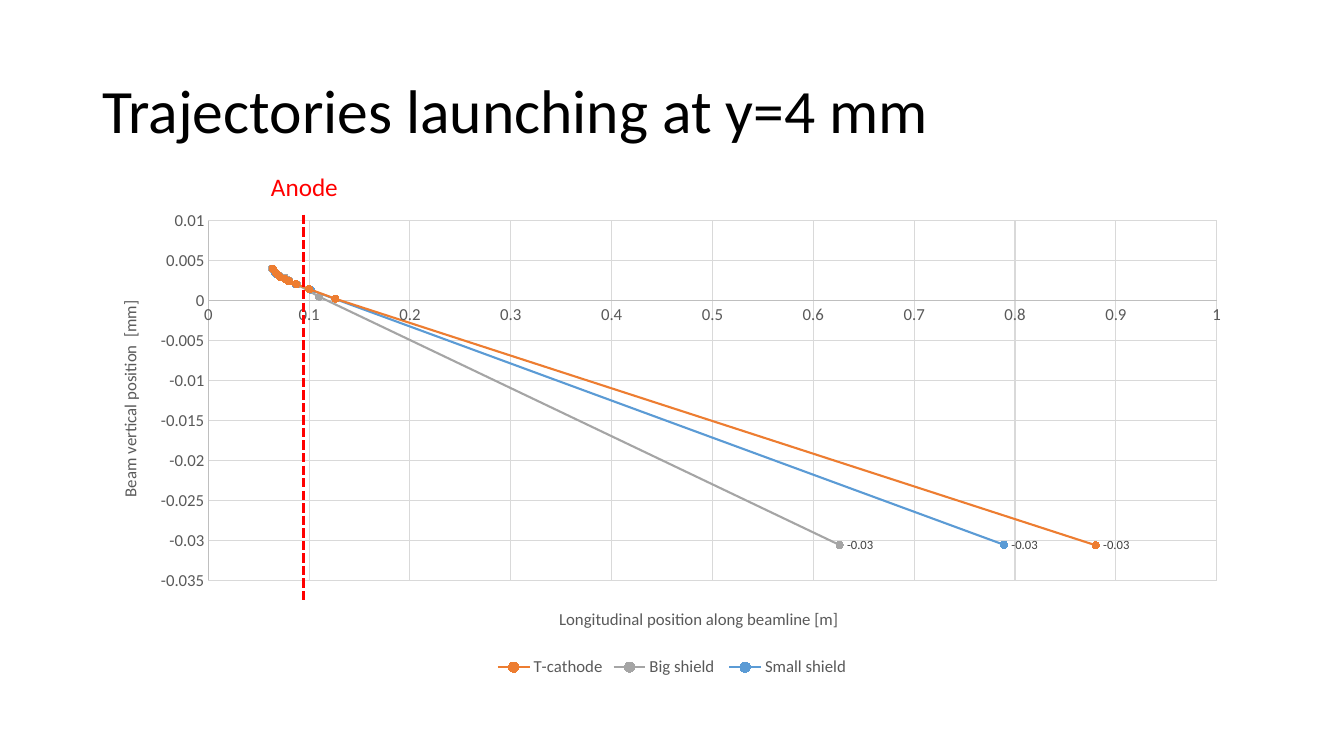
from lxml import etree
from pptx import Presentation
from pptx.chart.data import XyChartData
from pptx.dml.color import RGBColor
from pptx.enum import chart as ch, dml, shapes, text
from pptx.oxml import parse_xml
from pptx.oxml.ns import nsdecls, qn
from pptx.util import Pt

HUES = {"ink": "000000", "grey": "595959", "label": "404040", "axis": "BFBFBF",
        "grid": "D9D9D9", "red": "FF0000"}
FACE = "Calibri"
TITLE = "Trajectories launching at y=4 mm"
PATHS = [
    ("T-cathode", "ED7D31",
     [0.064] * 6 + [0.067, 0.069, 0.071, 0.076, 0.08, 0.087, 0.1, 0.126, 0.88],
     [0.004, 0.004, 0.004, 0.004, 0.003999, 0.003973, 0.003479, 0.003221,
      0.002966, 0.002719, 0.002432, 0.002063, 0.001444, 0.000238, -0.030607]),
    ("Big shield ", "A5A5A5",
     [0.063] * 6 + [0.067, 0.07, 0.076, 0.08, 0.088, 0.11, 0.626],
     [0.004, 0.004, 0.004, 0.004, 0.003999, 0.003982, 0.003464, 0.003171,
      0.002862, 0.002525, 0.002031, 0.000492, -0.030567]),
    ("Small shield", "5B9BD5",
     [0.064, 0.064, 0.066, 0.068, 0.071, 0.076, 0.08, 0.087, 0.102, 0.789],
     [0.004, 0.004, 0.003549, 0.003279, 0.003014, 0.002755, 0.002453,
      0.002047, 0.001307, -0.030542]),
]
AXES = {
    "category_axis": ("Longitudinal position along beamline [m]", 0, 1, 0.1, (0.4, 0.84)),
    "value_axis": ("Beam vertical position  [mm]", -0.035, 0.01, 0.005, (0.02, 0.2)),
}
PLOT = (0.1, 0.04, 0.87, 0.75)


def tint(name):
    return RGBColor.from_string(HUES.get(name, name))


def style(font, size, hue):
    font.name, font.size, font.bold = FACE, Pt(size), False
    font.color.rgb = tint(hue)


def rule(line, hue, width):
    line.color.rgb = tint(hue)
    line.width = Pt(width)


def write(slide, box, words, size, hue, wrap):
    frame = slide.shapes.add_textbox(*map(Pt, box)).text_frame
    frame.text, frame.word_wrap = words, wrap
    frame.vertical_anchor = text.MSO_ANCHOR.MIDDLE if wrap else text.MSO_ANCHOR.TOP
    style(frame.paragraphs[0].runs[0].font, size, hue)
    return frame


def place(host, spots, inner=False):
    layout = host.find(qn("c:layout"))
    if layout is None:
        layout = etree.Element(qn("c:layout"))
        host.insert(1 if host.find(qn("c:tx")) is not None else 0, layout)
    manual = etree.SubElement(layout, qn("c:manualLayout"))
    parts = [("layoutTarget", "inner")] if inner else []
    parts += [("xMode", "edge"), ("yMode", "edge")]
    parts += list(zip("xywh", spots))
    for tag, val in parts:
        etree.SubElement(manual, qn("c:" + tag)).set("val", str(val))


def set_axis(axis, title, low, high, step, spot):
    axis.minimum_scale, axis.maximum_scale, axis.major_unit = low, high, step
    axis.major_tick_mark = axis.minor_tick_mark = ch.XL_TICK_MARK.NONE
    axis.has_major_gridlines = True
    rule(axis.major_gridlines.format.line, "grid", 0.75)
    rule(axis.format.line, "axis", 0.75)
    style(axis.tick_labels.font, 12, "grey")
    axis.tick_labels.number_format = "General"
    axis.tick_labels.number_format_is_linked = False
    frame = axis.axis_title.text_frame
    frame.text = title
    style(frame.paragraphs[0].runs[0].font, 12, "grey")
    place(axis.axis_title._element, spot)


def set_path(path, hue, last):
    path.smooth = True
    rule(path.format.line, hue, 1.5)
    mark = path.marker
    mark.style, mark.size = ch.XL_MARKER_STYLE.CIRCLE, 5
    mark.format.fill.solid()
    mark.format.fill.fore_color.rgb = tint(hue)
    rule(mark.format.line, hue, 0.75)
    label = path.points[last].data_label
    style(label.font, 9, "label")
    label.position = ch.XL_LABEL_POSITION.RIGHT
    form = parse_xml(f'<c:numFmt {nsdecls("c")} formatCode="0.00" sourceLinked="0"/>')
    group = path._element.find(qn("c:dLbls"))
    group.find(qn("c:dLbl")).insert(1, form)
    show = group.find(qn("c:showVal"))
    if show is not None:
        show.set("val", "0")


def draw_chart(slide):
    data = XyChartData()
    for name, _, xs, ys in PATHS:
        series = data.add_series(name)
        for x, y in zip(xs, ys):
            series.add_data_point(x, y)
    box = map(Pt, (66, 144, 828, 342.6))
    chart = slide.shapes.add_chart(ch.XL_CHART_TYPE.XY_SCATTER_SMOOTH, *box, data).chart
    chart.has_title = False
    style(chart.font, 10, "ink")
    for name, facts in AXES.items():
        set_axis(getattr(chart, name), *facts)
    chart.plots[0].vary_by_categories = False
    for path, (_, hue, xs, _) in zip(chart.plots[0].series, PATHS):
        set_path(path, hue, len(xs) - 1)
    chart.has_legend = True
    chart.legend.position = ch.XL_LEGEND_POSITION.BOTTOM
    chart.legend.include_in_layout = False
    style(chart.legend.font, 12, "grey")
    place(chart._chartSpace.find(".//" + qn("c:plotArea")), PLOT, True)


def draw_anode(slide):
    frame = write(slide, (186.5, 118.8, 62.6, 28.8), "Anode", 18, "red", False)
    frame.auto_size = text.MSO_AUTO_SIZE.SHAPE_TO_FIT_TEXT
    ends = map(Pt, (216.7, 153.4, 216.7, 429.1))
    line = slide.shapes.add_connector(shapes.MSO_CONNECTOR.STRAIGHT, *ends)
    rule(line.line, "red", 2.25)
    line.line.dash_style = dml.MSO_LINE.SQUARE_DOT
    etree.SubElement(line._element.spPr, qn("a:effectLst"))


def main():
    """Build the slide of beam trajectories past the anode."""
    deck = Presentation()
    deck.slide_width, deck.slide_height = Pt(960), Pt(540)
    slide = deck.slides.add_slide(deck.slide_layouts[6])
    title = write(slide, (66, 28.8, 828, 104.4), TITLE, 44, "ink", True)
    title.paragraphs[0].line_spacing = 0.9
    draw_chart(slide)
    draw_anode(slide)
    deck.save("out.pptx")


if __name__ == "__main__":
    main()
